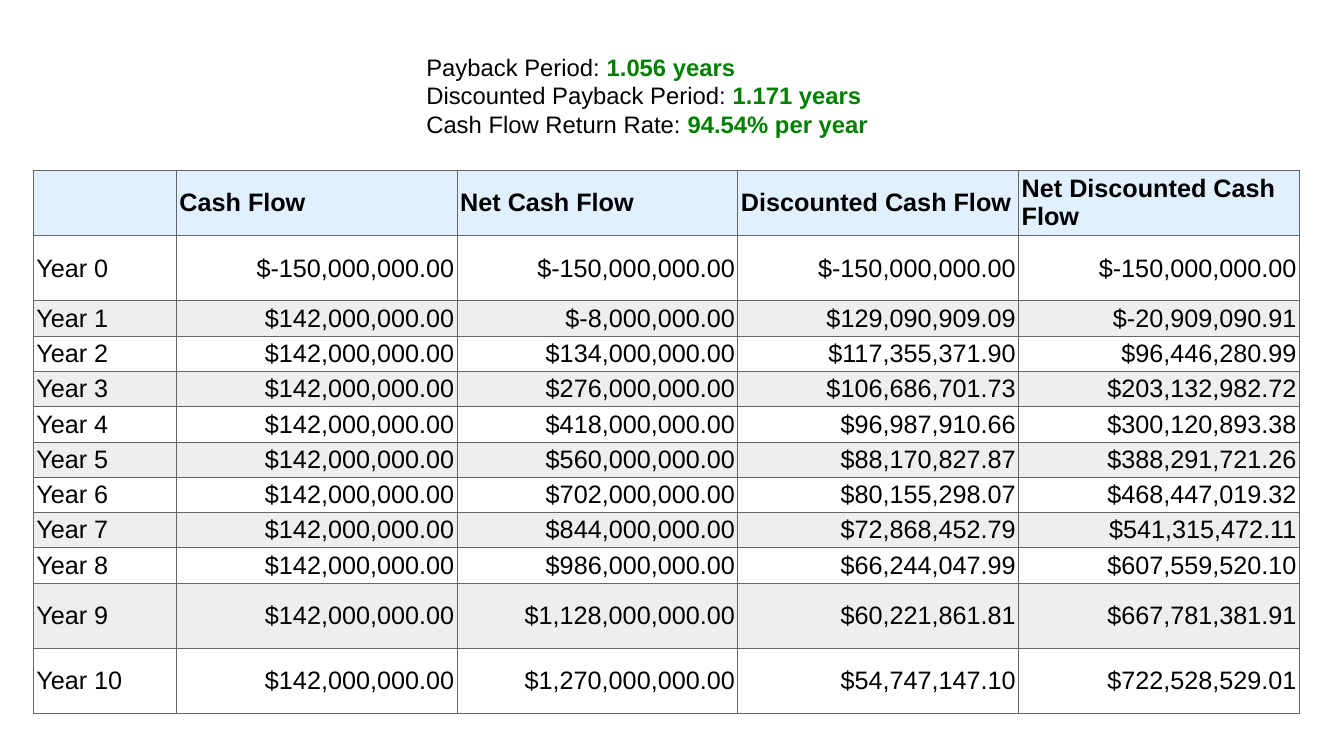
from dataclasses import dataclass
from itertools import accumulate

from lxml import etree
from pptx import Presentation
from pptx.dml.color import RGBColor
from pptx.enum.text import MSO_ANCHOR, PP_ALIGN
from pptx.oxml.ns import qn
from pptx.util import Inches, Pt

MIDDLE = MSO_ANCHOR.MIDDLE
LEFT, RIGHT = PP_ALIGN.LEFT, PP_ALIGN.RIGHT
BLANK_LAYOUT = 6


@dataclass(frozen=True)
class Theme:
    font: str = "Arial"
    summary_size: float = 17
    table_size: float = 18
    border_width: float = 0.75
    text: str = "000000"
    result: str = "008000"
    header: str = "E0F0FE"
    plain_row: str = "FFFFFF"
    shaded_row: str = "EEEEEE"
    border: str = "666666"


THEME = Theme()

SUMMARY = [
    ("Payback Period: ", "1.056 years"),
    ("Discounted Payback Period: ", "1.171 years"),
    ("Cash Flow Return Rate: ", "94.54% per year"),
]
HEADERS = ["", "Cash Flow", "Net Cash Flow", "Discounted Cash Flow",
           "Net Discounted Cash Flow"]
INVESTMENT = -150_000_000
YEARLY_INCOME = 142_000_000
YEARS = 10
DISCOUNT_RATE = 0.10

LABEL_WIDTH = 1.42
SHORT_ROW = 0.35
TALL_ROWS = {0, 1, 10, 11}
CELL_MARGIN = 0.03


def cash_flow_rows():
    """Return the label and four dollar amounts of every year."""
    flows = [INVESTMENT] + [YEARLY_INCOME] * YEARS
    discounted = [flow / (1 + DISCOUNT_RATE) ** year
                  for year, flow in enumerate(flows)]
    columns = zip(flows, accumulate(flows), discounted, accumulate(discounted))
    return [[f"Year {year}"] + [f"${amount:,.2f}" for amount in amounts]
            for year, amounts in enumerate(columns)]


def add_span(para, text, size, color=THEME.text, bold=False):
    span = para.add_run()
    span.text = text
    span.font.name = THEME.font
    span.font.size = Pt(size)
    span.font.bold = bold
    span.font.color.rgb = RGBColor.from_string(color)


def add_summary(page, left, top, width, height):
    box = page.shapes.add_textbox(Inches(left), Inches(top),
                                  Inches(width), Inches(height))
    frame = box.text_frame
    frame.word_wrap = True
    frame.vertical_anchor = MIDDLE
    frame.margin_bottom = Inches(0.61)
    for index, (label, result) in enumerate(SUMMARY):
        para = frame.add_paragraph() if index else frame.paragraphs[0]
        add_span(para, label, THEME.summary_size)
        add_span(para, result, THEME.summary_size, THEME.result, bold=True)


def add_borders(cell):
    properties = cell._tc.get_or_add_tcPr()
    for side in ("a:lnL", "a:lnR", "a:lnT", "a:lnB"):
        line = etree.SubElement(properties, qn(side),
                                w=str(Pt(THEME.border_width)))
        fill = etree.SubElement(line, qn("a:solidFill"))
        etree.SubElement(fill, qn("a:srgbClr"), val=THEME.border)


def fill_cell(cell, text, color, align, bold):
    add_borders(cell)
    cell.fill.solid()
    cell.fill.fore_color.rgb = RGBColor.from_string(color)
    cell.vertical_anchor = MIDDLE
    cell.margin_left = cell.margin_right = Inches(CELL_MARGIN)
    cell.margin_top = cell.margin_bottom = Inches(CELL_MARGIN)
    para = cell.text_frame.paragraphs[0]
    para.alignment = align
    if text:
        add_span(para, text, THEME.table_size, bold=bold)


def add_cash_flow_table(page, left, top, width, height):
    rows = [HEADERS] + cash_flow_rows()
    table = page.shapes.add_table(len(rows), len(HEADERS), Inches(left),
                                  Inches(top), Inches(width),
                                  Inches(height)).table
    amount_width = (width - LABEL_WIDTH) / (len(HEADERS) - 1)
    for index, column in enumerate(table.columns):
        column.width = Inches(amount_width if index else LABEL_WIDTH)

    short_total = SHORT_ROW * (len(rows) - len(TALL_ROWS))
    tall_row = (height - short_total) / len(TALL_ROWS)
    for row_index, texts in enumerate(rows):
        is_header = row_index == 0
        table.rows[row_index].height = Inches(
            tall_row if row_index in TALL_ROWS else SHORT_ROW)
        if is_header:
            color = THEME.header
        else:
            color = THEME.plain_row if row_index % 2 else THEME.shaded_row
        for column_index, text in enumerate(texts):
            align = LEFT if is_header or column_index == 0 else RIGHT
            fill_cell(table.cell(row_index, column_index), text, color,
                      align, is_header)


def main():
    deck = Presentation()
    deck.slide_width, deck.slide_height = Inches(13.33), Inches(7.5)
    page = deck.slides.add_slide(deck.slide_layouts[BLANK_LAYOUT])
    add_cash_flow_table(page, 0.33, 1.69, 12.56, 5.39)
    add_summary(page, 4.13, 0.44, 9.2, 1.57)
    deck.save("out.pptx")


if __name__ == "__main__":
    main()
